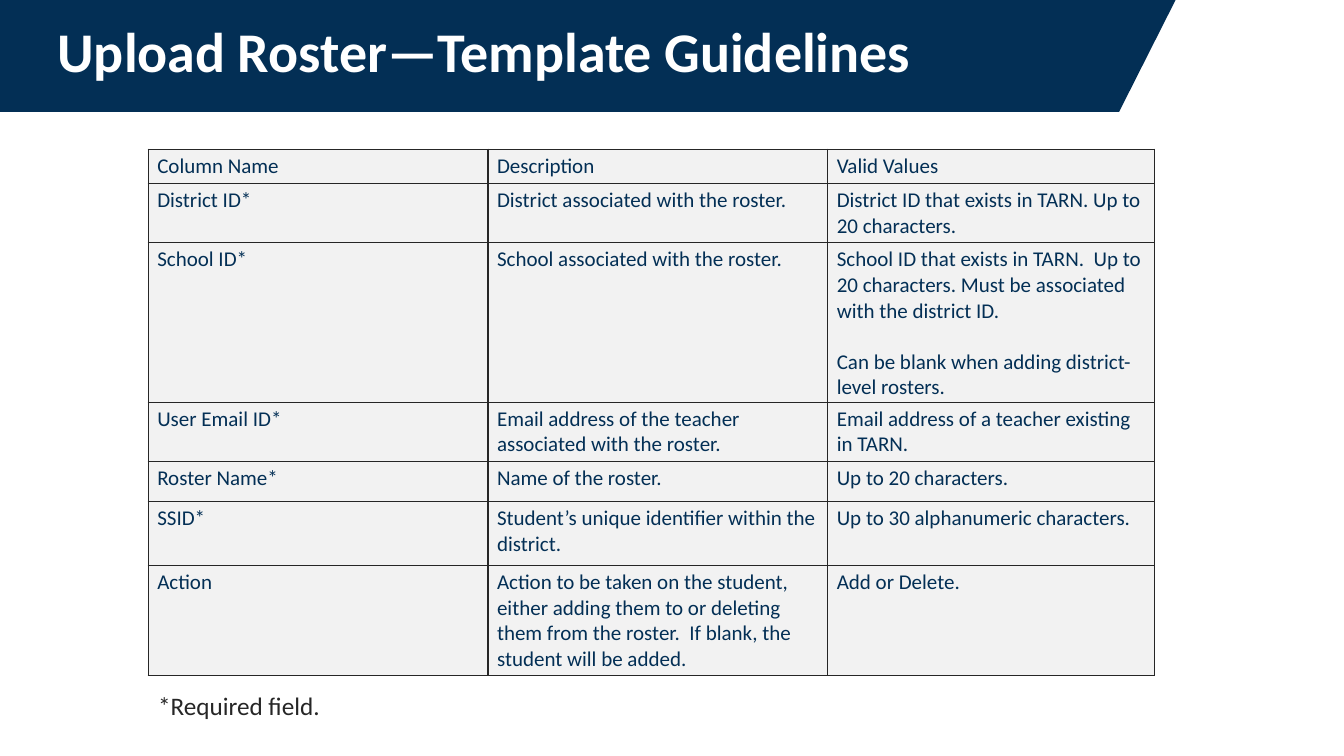
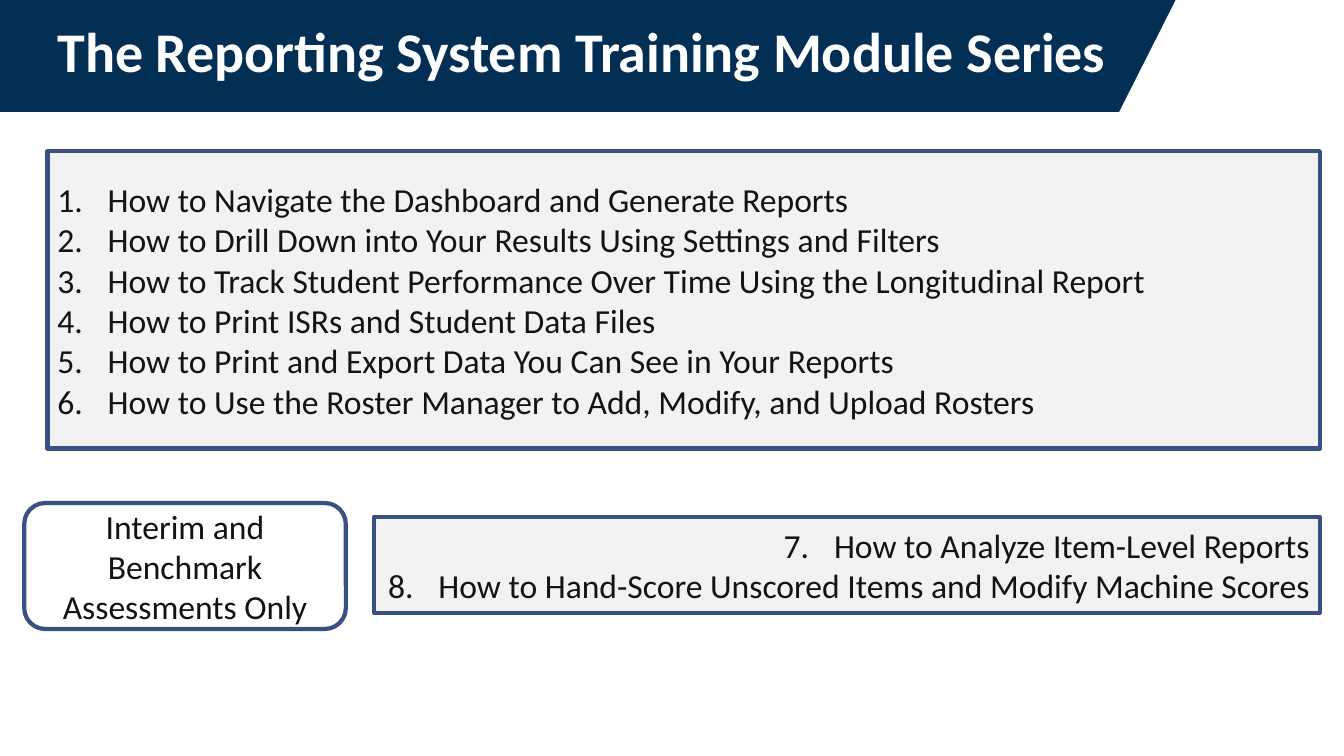
from lxml import etree
from pptx import Presentation
from pptx import util as u
from pptx.dml.color import RGBColor
from pptx.enum import shapes, text
from pptx.oxml.ns import qn

WIDTH, HEIGHT = 13.33, 7.5
MARGIN = 0.47
RIGHT_EDGE = 13.09
BODY_TOP = 1.5
TABLE_LEFT = 1.47
BAND_WIDTH, BAND_HEIGHT, BAND_SLANT = 11.66, 1.11, 0.56
FONT = "Calibri"
COLORS = {
    "navy": "032F55",
    "border": "395182",
    "panel": "F2F2F2",
    "ink": "131313",
    "grid": "262626",
    "white": "FFFFFF",
}

ROSTER_COLUMNS = [3.37, 3.37, 3.24]
ROSTER_ROW_HEIGHTS = [0.34, 0.59, 1.58, 0.59, 0.4, 0.63, 1.09]
ROSTER_ROWS = [
    ("Column Name", "Description", "Valid Values"),
    ("District ID*", "District associated with the roster.",
     "District ID that exists in TARN. Up to 20 characters."),
    ("School ID*", "School associated with the roster.",
     "School ID that exists in TARN.  Up to 20 characters. "
     "Must be associated with the district ID.\n"
     "Can be blank when adding district-level rosters."),
    ("User Email ID*", "Email address of the teacher associated with the roster.",
     "Email address of a teacher existing in TARN."),
    ("Roster Name*", "Name of the roster.", "Up to 20 characters."),
    ("SSID*", "Student’s unique identifier within the district.",
     "Up to 30 alphanumeric characters."),
    ("Action", "Action to be taken on the student, either adding them to or "
     "deleting them from the roster.  If blank, the student will be added.",
     "Add or Delete."),
]
ALL_MODULES = [
    "How to Navigate the Dashboard and Generate Reports",
    "How to Drill Down into Your Results Using Settings and Filters",
    "How to Track Student Performance Over Time Using the Longitudinal Report",
    "How to Print ISRs and Student Data Files",
    "How to Print and Export Data You Can See in Your Reports",
    "How to Use the Roster Manager to Add, Modify, and Upload Rosters",
]
INTERIM_MODULES = [
    "How to Analyze Item-Level Reports",
    "How to Hand-Score Unscored Items and Modify Machine Scores",
]


def rgb(name):
    return RGBColor.from_string(COLORS[name])


def place(sp, left, top, width, height):
    sp.left, sp.top, sp.width, sp.height = map(u.Inches, (left, top, width, height))


def write(tf, content, size, color, align=text.PP_ALIGN.LEFT, bold=False):
    """Fill a text frame, one paragraph per line of content."""
    tf.word_wrap = True
    tf.text = content
    for p in tf.paragraphs:
        p.alignment = align
        for r in p.runs:
            r.font.name, r.font.size, r.font.bold = FONT, u.Pt(size), bold
            r.font.color.rgb = rgb(color)


def number(tf, start=1):
    for p in tf.paragraphs:
        pPr = p._p.get_or_add_pPr()
        pPr.set("marL", str(u.Inches(0.5)))
        pPr.set("indent", str(-u.Inches(0.5)))
        etree.SubElement(pPr, qn("a:buFont"), typeface="+mj-lt")
        etree.SubElement(pPr, qn("a:buAutoNum"), type="arabicPeriod", startAt=str(start))


def add_band(slide, layout):
    """Draw the slanted title band and hand it to the layout for all slides."""
    corners = [(BAND_WIDTH, 0), (BAND_WIDTH - BAND_SLANT, BAND_HEIGHT), (0, BAND_HEIGHT)]
    builder = slide.shapes.build_freeform(0, 0)
    builder.add_line_segments([(u.Inches(x), u.Inches(y)) for x, y in corners])
    band = builder.convert_to_shape()
    band.shadow.inherit = False
    band.fill.solid()
    band.fill.fore_color.rgb = rgb("navy")
    band.line.fill.background()
    layout.shapes.element.append(band.element)


def add_titled_slide(prs, layout, title):
    slide = prs.slides.add_slide(layout)
    sp = slide.shapes.title
    place(sp, MARGIN, 0, 11.5, 1.08)
    tf = sp.text_frame
    write(tf, title, 40, "white", bold=True)
    tf.auto_size = text.MSO_AUTO_SIZE.NONE
    tf.vertical_anchor = text.MSO_ANCHOR.MIDDLE
    tf.paragraphs[0].line_spacing = 0.9
    return slide


def add_panel(slide, box, content, fill=None, kind=shapes.MSO_SHAPE.RECTANGLE,
              align=text.PP_ALIGN.LEFT):
    sp = slide.shapes.add_shape(kind, *map(u.Inches, box))
    sp.shadow.inherit = False
    if fill:
        sp.fill.solid()
        sp.fill.fore_color.rgb = rgb(fill)
    else:
        sp.fill.background()
    sp.line.color.rgb = rgb("border")
    sp.line.width = u.Pt(3)
    sp.text_frame.vertical_anchor = text.MSO_ANCHOR.MIDDLE
    write(sp.text_frame, content, 24, "ink", align)
    return sp.text_frame


def border_cell(cell):
    tcPr = cell._tc.get_or_add_tcPr()
    for side in ("lnL", "lnR", "lnT", "lnB"):
        ln = etree.SubElement(tcPr, qn(f"a:{side}"), w=str(u.Pt(1)))
        fill = etree.SubElement(ln, qn("a:solidFill"))
        etree.SubElement(fill, qn("a:srgbClr"), val=COLORS["grid"])


def add_grid(slide, left, top, columns, heights, rows):
    frame = slide.shapes.add_table(
        len(rows), len(columns), u.Inches(left), u.Inches(top),
        u.Inches(sum(columns)), u.Inches(sum(heights)))
    table = frame.table
    for column, width in zip(table.columns, columns):
        column.width = u.Inches(width)
    for row, height, values in zip(table.rows, heights, rows):
        row.height = u.Inches(height)
        for cell, value in zip(row.cells, values):
            border_cell(cell)
            cell.fill.solid()
            cell.fill.fore_color.rgb = rgb("panel")
            cell.margin_left = cell.margin_right = u.Inches(0.09)
            cell.margin_top = cell.margin_bottom = u.Inches(0.04)
            write(cell.text_frame, value, 15, "navy")
            for p in cell.text_frame.paragraphs[1:]:
                p.space_before = u.Pt(18)


def add_guidelines(slide):
    note = slide.shapes.add_textbox(*map(u.Inches, (TABLE_LEFT, 6.8, 3.6, 0.4)))
    write(note.text_frame, "*Required field.", 18, "grid")
    add_grid(slide, TABLE_LEFT, 1.48, ROSTER_COLUMNS, ROSTER_ROW_HEIGHTS, ROSTER_ROWS)


def add_module_series(slide):
    tf = add_panel(slide, (MARGIN, BODY_TOP, RIGHT_EDGE - MARGIN, 2.95),
                   "\n".join(ALL_MODULES), fill="panel")
    number(tf)
    add_panel(slide, (0.24, 4.99, 3.19, 1.25), "Interim and Benchmark Assessments Only",
              kind=shapes.MSO_SHAPE.ROUNDED_RECTANGLE, align=text.PP_ALIGN.CENTER)
    left = 3.71
    tf = add_panel(slide, (left, 5.13, RIGHT_EDGE - left, 0.95),
                   "\n".join(INTERIM_MODULES), fill="panel", align=text.PP_ALIGN.RIGHT)
    number(tf, start=len(ALL_MODULES) + 1)


def main():
    prs = Presentation()
    prs.slide_width, prs.slide_height = u.Inches(WIDTH), u.Inches(HEIGHT)
    layout = prs.slide_layouts.get_by_name("Title Only")
    guidelines = add_titled_slide(prs, layout, "Upload Roster—Template Guidelines")
    add_band(guidelines, layout)
    add_guidelines(guidelines)
    series = add_titled_slide(prs, layout, "The Reporting System Training Module Series")
    add_module_series(series)
    prs.save("out.pptx")


if __name__ == "__main__":
    main()
